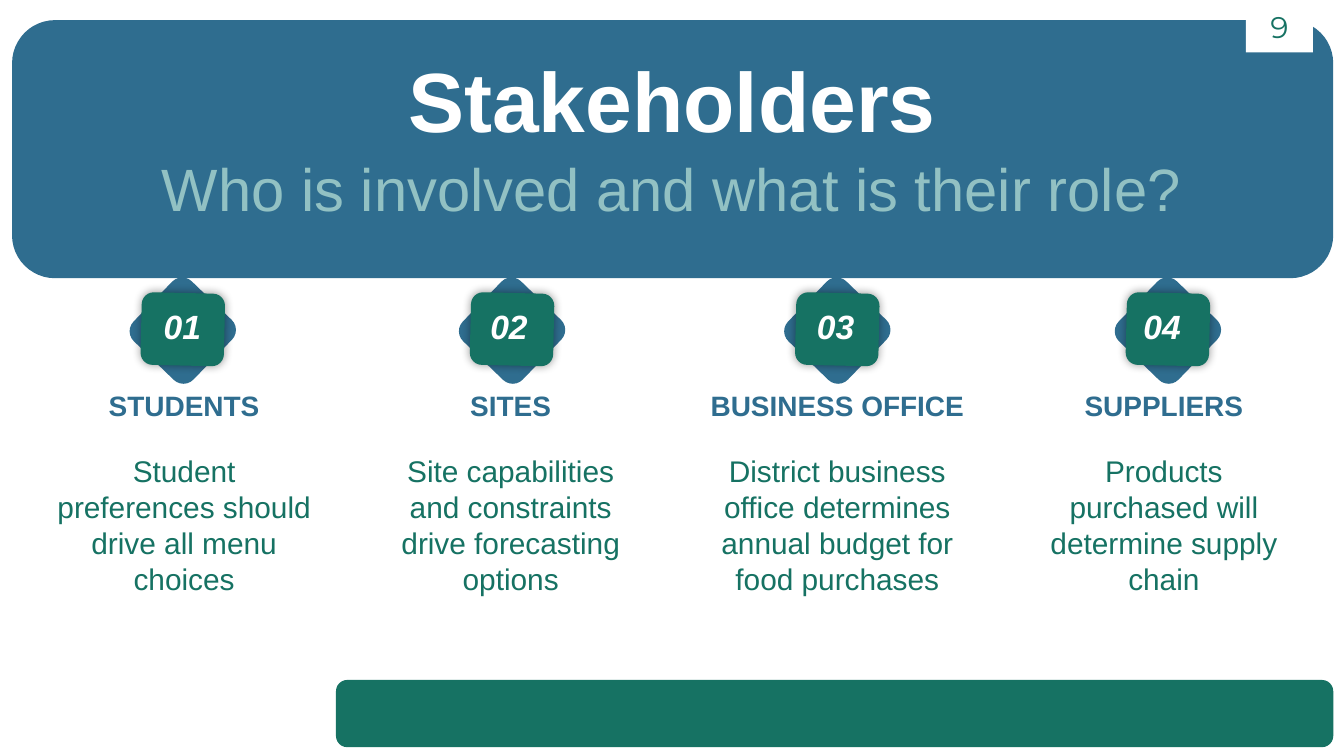
from dataclasses import dataclass

from lxml import etree
from pptx import Presentation
from pptx import util as u
from pptx.dml.color import RGBColor
from pptx.enum import shapes, text
from pptx.oxml import ns


@dataclass(frozen=True)
class Theme:
    """Colours, fonts and type sizes of the deck."""
    blue: str = "2F6D8F"
    green: str = "167263"
    aqua: str = "92C1C3"
    white: str = "FFFFFF"
    shadow: str = "000000"
    font: str = "Arial"
    number_font: str = "Montserrat"
    title: int = 45
    subtitle: int = 32
    heading: int = 15
    body: int = 16
    badge: int = 18


THEME = Theme()
ROUND = shapes.MSO_SHAPE.ROUNDED_RECTANGLE
COLUMN_PITCH = 2.43
STAKEHOLDERS = [
    (1.05, "STUDENTS", "Student preferences should drive all menu choices"),
    (3.5, "SITES", "Site capabilities and constraints drive forecasting options"),
    (5.92, "BUSINESS OFFICE",
     "District business office determines annual budget for food purchases"),
    (8.38, "SUPPLIERS", "Products purchased will determine supply chain"),
]


def add_block(parent, kind, at, color, rotation=0):
    """Add a filled shape without outline or shadow."""
    block = parent.add_shape(kind, *map(u.Inches, at))
    block.shadow.inherit = False
    block.fill.solid()
    block.fill.fore_color.rgb = RGBColor.from_string(color)
    block.line.fill.background()
    block.rotation = rotation
    return block


def add_glow(block, blur):
    """Give a shape a soft shadow on all sides, measured in points."""
    effects = block._element.spPr.find(ns.qn("a:effectLst"))
    outer = etree.SubElement(effects, ns.qn("a:outerShdw"), blurRad=str(u.Pt(blur)),
                             dist="0", dir="0", rotWithShape="0")
    color = etree.SubElement(outer, ns.qn("a:srgbClr"), val=THEME.shadow)
    etree.SubElement(color, ns.qn("a:alpha"), val="40000")


def style_para(para, size, color, bold=False, italic=False, font=THEME.font):
    """Set the font of a whole paragraph."""
    para.font.name = font
    para.font.size = u.Pt(size)
    para.font.bold = bold
    para.font.italic = italic
    para.font.color.rgb = RGBColor.from_string(color)


def add_text(page, words, at, size, color, side=0.1,
             align=text.PP_ALIGN.CENTER, bold=False, italic=False):
    """Add a wrapped text box with one paragraph."""
    box = page.shapes.add_textbox(*map(u.Inches, at))
    frame = box.text_frame
    frame.word_wrap = True
    frame.margin_left = frame.margin_right = u.Inches(side)
    para = frame.paragraphs[0]
    para.text = words
    para.alignment = align
    style_para(para, size, color, bold, italic)


def add_badge(page, left):
    """Add a turned blue square with a green plate on it."""
    badge = page.shapes.add_group_shape()
    add_block(badge.shapes, ROUND, (left, 2.15, 0.62, 0.62), THEME.blue, 314)
    plate = add_block(badge.shapes, ROUND, (left, 2.18, 0.62, 0.54), THEME.green, 1.3)
    add_glow(plate, 5)


def add_stakeholder(page, index, badge_left, heading, role):
    """Add the badge, number, heading and role of one stakeholder."""
    shift = index * COLUMN_PITCH
    add_badge(page, badge_left)
    add_text(page, f"{index + 1:02}", (1.12 + shift, 2.23, 0.53, 0.42), THEME.badge,
             THEME.white, align=text.PP_ALIGN.LEFT, bold=True, italic=True)
    add_text(page, heading, (0.28 + shift, 2.84, 2.18, 0.33), THEME.heading,
             THEME.blue, bold=True)
    add_text(page, role, (0.28 + shift, 3.32, 2.18, 1.08), THEME.body,
             THEME.green, side=0.13)


def add_page_number(page, number):
    """Add the white tag with the page number."""
    tag = add_block(page.shapes, shapes.MSO_SHAPE.RECTANGLE, (9.27, 0, 0.5, 0.39), THEME.white)
    tag.text_frame.vertical_anchor = text.MSO_ANCHOR.MIDDLE
    para = tag.text_frame.paragraphs[0]
    para.text = number
    para.alignment = text.PP_ALIGN.CENTER
    style_para(para, THEME.body, THEME.green, font=THEME.number_font)


def main():
    """Build the stakeholder slide and save it."""
    deck = Presentation()
    deck.slide_width, deck.slide_height = u.Inches(10), u.Inches(10 * 9 / 16)
    page = deck.slides.add_slide(deck.slide_layouts[6])
    add_block(page.shapes, ROUND, (0.09, 0.15, 9.83, 1.92), THEME.blue)
    add_block(page.shapes, ROUND, (2.5, 5.06, 7.42, 0.5), THEME.green)
    add_text(page, "Stakeholders", (0.29, 0.31, 9.42, 0.74), THEME.title,
             THEME.white, bold=True)
    add_text(page, "Who is involved and what is their role?", (0.29, 1.08, 9.42, 0.67),
             THEME.subtitle, THEME.aqua)
    for index, stakeholder in enumerate(STAKEHOLDERS):
        add_stakeholder(page, index, *stakeholder)
    add_page_number(page, "9")
    deck.save("out.pptx")


if __name__ == "__main__":
    main()
